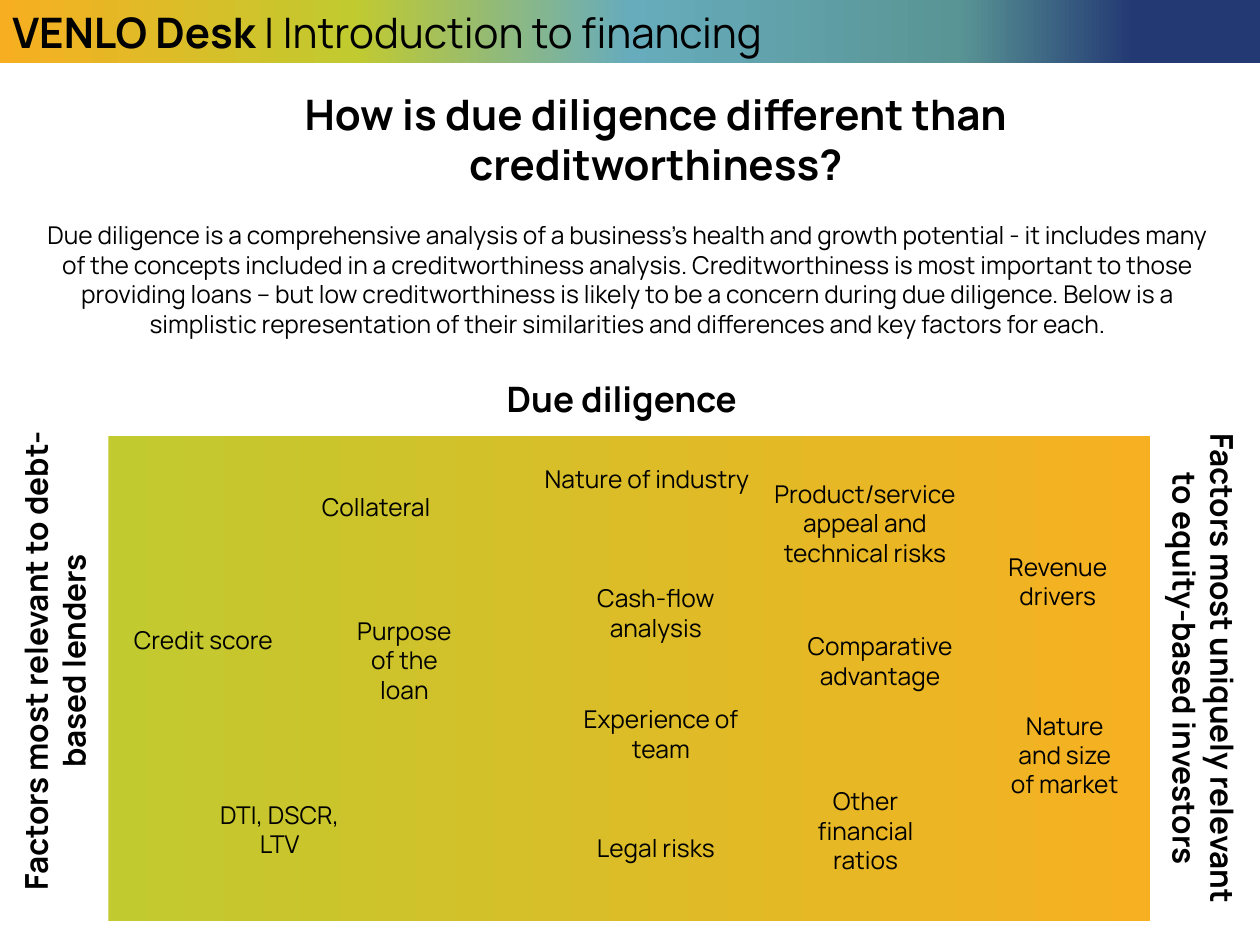
"""Build the slide comparing due diligence with creditworthiness."""
import pptx
import pptx.dml.color
import pptx.enum.shapes
import pptx.enum.text
import pptx.oxml
import pptx.oxml.ns
import pptx.util

PX = 9144
FONT = "Manrope"
BLACK = "000000"
ALIGN = pptx.enum.text.PP_ALIGN
ANCHOR = pptx.enum.text.MSO_ANCHOR

HEADER_STOPS = [(0, "F7AF21"), (28, "C1CA2F"), (50, "67ACBC"), (76, "599595"), (90, "233973")]
PANEL_STOPS = [(0, "C1CA2F"), (100, "F6B021")]

INTRO = (
    "Due diligence is a comprehensive analysis of a business’s health and growth potential"
    " - it includes many of the concepts included in a creditworthiness analysis."
    " Creditworthiness is most important to those providing loans – but low creditworthiness"
    " is likely to be a concern during due diligence. Below is a simplistic representation"
    " of their similarities and differences and key factors for each."
)

FACTORS = [
    ("Credit score", 95, 491, 133, 57),
    ("Purpose of the loan", 265, 484, 112, 81),
    ("Cash-flow analysis", 426, 458, 189, 57),
    ("DTI, DSCR, LTV", 158, 630, 128, 57),
    ("Revenue drivers", 765, 433, 149, 57),
    ("Nature and size of market", 789, 559, 112, 104),
    ("Other financial ratios", 623, 619, 128, 81),
    ("Nature of industry", 419, 363, 189, 57),
    ("Legal risks", 463, 656, 115, 57),
    ("Experience of team", 430, 554, 189, 57),
    ("Collateral", 204, 386, 189, 34),
    ("Comparative advantage", 612, 496, 173, 57),
    ("Product/service appeal and technical risks", 589, 375, 195, 81),
]


def px(*lengths):
    """Turn whole px into EMU."""
    return [pptx.util.Emu(n * PX) for n in lengths]


def color(value):
    """Turn a hex string into a colour."""
    return pptx.dml.color.RGBColor.from_string(value)


def set_gradient(sp, stops):
    """Fill a shape with a left-to-right gradient."""
    sp.fill.gradient()
    sp.fill.gradient_angle = 0
    gs_list = sp._element.spPr.find(".//" + pptx.oxml.ns.qn("a:gsLst"))
    for gs in list(gs_list):
        gs_list.remove(gs)
    for percent, value in stops:
        gs_list.append(pptx.oxml.parse_xml(
            f'<a:gs {pptx.oxml.ns.nsdecls("a")} pos="{percent * 1000}">'
            f'<a:srgbClr val="{value}"/></a:gs>'))


def add_run(p, text, size=14, bold=False):
    """Add one formatted run to a paragraph."""
    r = p.add_run()
    r.text = text
    r.font.name = FONT
    r.font.size = pptx.util.Pt(size)
    r.font.bold = bold
    r.font.color.rgb = color(BLACK)


def set_text(sp, *runs, align=ALIGN.CENTER, anchor=ANCHOR.TOP, **fmt):
    """Write runs, each a text or a (text, bold) pair, into a shape."""
    tf = sp.text_frame
    tf.word_wrap = True
    tf.auto_size = pptx.enum.text.MSO_AUTO_SIZE.SHAPE_TO_FIT_TEXT
    tf.vertical_anchor = anchor
    p = tf.paragraphs[0]
    p.alignment = align
    for run in runs:
        if isinstance(run, tuple):
            add_run(p, run[0], bold=run[1], **fmt)
        else:
            add_run(p, run, **fmt)


def add_label(s, text, x, y, w, h, rotation=0, **fmt):
    """Add a centred text box."""
    sp = s.shapes.add_textbox(*px(x, y, w, h))
    sp.rotation = rotation
    set_text(sp, text, **fmt)


def add_band(s, x, y, w, h, stops):
    """Add a borderless rectangle with a gradient."""
    sp = s.shapes.add_shape(pptx.enum.shapes.MSO_SHAPE.RECTANGLE, *px(x, y, w, h))
    sp.shadow.inherit = False
    sp.line.fill.background()
    set_gradient(sp, stops)
    return sp


def set_title(s, text, x, y, w, h):
    """Move and format the title placeholder."""
    sp = s.shapes.title
    sp.left, sp.top, sp.width, sp.height = px(x, y, w, h)
    set_text(sp, text, size=24, bold=True)


def main():
    """Build and save the slide."""
    prs = pptx.Presentation()
    prs.slide_width, prs.slide_height = px(1000, 750)
    s = prs.slides.add_slide(prs.slide_layouts.get_by_name("Title Only"))

    add_band(s, 86, 346, 827, 385, PANEL_STOPS)
    set_title(s, "How is due diligence different than creditworthiness?", 176, 65, 689, 91)
    header = add_band(s, 0, 0, 1000, 50, HEADER_STOPS)
    set_text(header, ("VENLO Desk ", True), ("| Introduction to financing", False),
             align=ALIGN.LEFT, anchor=ANCHOR.MIDDLE, size=24)

    add_label(s, INTRO, 22, 170, 953, 128)
    add_label(s, "Due diligence", 377, 295, 233, 44, size=20, bold=True)
    add_label(s, "Factors most relevant to debt-based lenders", -149, 489, 385, 71,
              rotation=270, size=18, bold=True)
    add_label(s, "Factors most uniquely relevant to equity-based investors", 744, 495, 422, 71,
              rotation=90, size=18, bold=True)
    for factor in FACTORS:
        add_label(s, *factor)

    prs.save("out.pptx")


if __name__ == "__main__":
    main()
